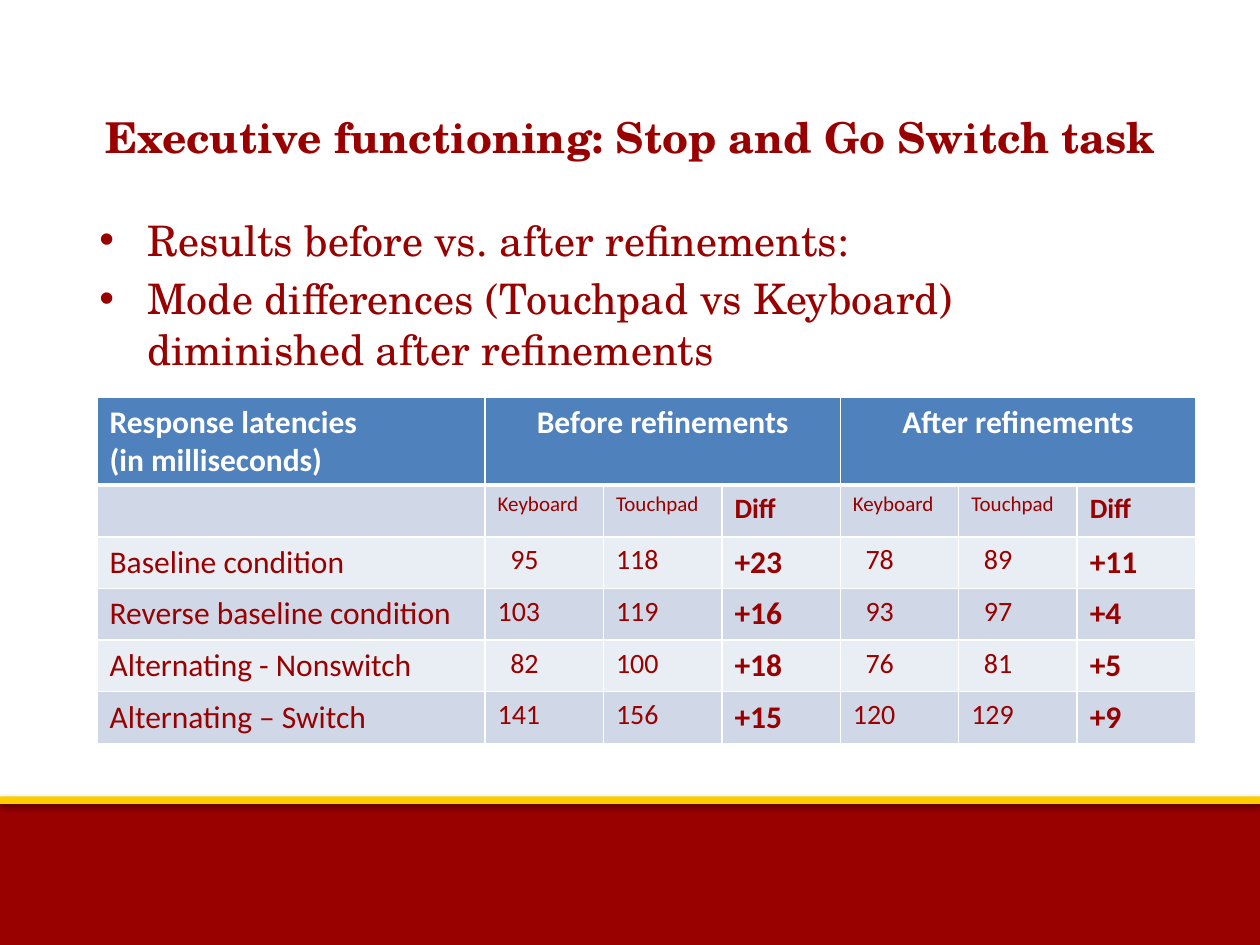
import dataclasses

import pptx
import pptx.dml.color
import pptx.enum.shapes
import pptx.enum.text
import pptx.oxml
import pptx.oxml.ns
import pptx.util

Inches = pptx.util.Inches
Pt = pptx.util.Pt
ALIGN = pptx.enum.text.PP_ALIGN
ANCHOR = pptx.enum.text.MSO_ANCHOR
NS = pptx.oxml.ns.nsdecls("a")


@dataclasses.dataclass(frozen=True)
class Theme:
    red: str = "990000"
    gold: str = "FFCC00"
    white: str = "FFFFFF"
    black: str = "000000"
    head: str = "4F81BD"
    bands: tuple = ("D0D8E8", "E9EDF4")
    serif: str = "TeX Gyre Schola"
    sans: str = "Calibri"
    title: float = 24.3
    body: float = 24
    large: float = 18
    mid: float = 16
    small: float = 12


THEME = Theme()
HEADS = ["Response latencies\n(in milliseconds)", "Before refinements", "After refinements"]
MODES = ["Keyboard", "Touchpad", "Diff"]
RESULTS = [
    ("Baseline condition", "95", "118", "+23", "78", "89", "+11"),
    ("Reverse baseline condition", "103", "119", "+16", "93", "97", "+4"),
    ("Alternating - Nonswitch", "82", "100", "+18", "76", "81", "+5"),
    ("Alternating – Switch", "141", "156", "+15", "120", "129", "+9"),
]


def paint(fill, color):
    fill.solid()
    fill.fore_color.rgb = pptx.dml.color.RGBColor.from_string(color)


def style(para, face, size, color, bold=False):
    for run in para.runs:
        run.font.name = face
        run.font.size = Pt(size)
        run.font.bold = bold
        paint(run.font.fill, color)


def add_band(slide, top, height, color, alpha, dist):
    """Draw a full-width bar with a soft shadow below it."""
    band = slide.shapes.add_shape(
        pptx.enum.shapes.MSO_SHAPE.RECTANGLE, 0, Inches(top), Inches(10), Inches(height))
    paint(band.fill, color)
    band.line.fill.background()
    band.shadow.inherit = False
    glow = band._element.spPr.find(pptx.oxml.ns.qn("a:effectLst"))
    glow.append(pptx.oxml.parse_xml(
        f'<a:outerShdw {NS} blurRad="{Pt(3.1)}" dist="{Pt(dist)}" dir="5400000" '
        f'rotWithShape="0"><a:srgbClr val="{THEME.black}">'
        f'<a:alpha val="{alpha * 1000}"/></a:srgbClr></a:outerShdw>'))


def add_frame(slide, top, height):
    box = slide.shapes.add_textbox(Inches(0.69), Inches(top), Inches(8.62), Inches(height))
    box.text_frame.word_wrap = True
    return box.text_frame


def add_title(slide, text):
    frame = add_frame(slide, 0.79, 0.59)
    frame.vertical_anchor = ANCHOR.MIDDLE
    frame.text = text
    para = frame.paragraphs[0]
    para.alignment = ALIGN.CENTER
    style(para, THEME.serif, THEME.title, THEME.red, True)


def add_list(slide, items):
    frame = add_frame(slide, 1.65, 3.94)
    for i, item in enumerate(items):
        para = frame.add_paragraph() if i else frame.paragraphs[0]
        para.text = item
        props = para._p.get_or_add_pPr()
        props.set("marL", str(Inches(0.38)))
        props.set("indent", str(-Inches(0.38)))
        for tag in ('buFont typeface="Arial"', 'buChar char="•"'):
            props.append(pptx.oxml.parse_xml(f"<a:{tag} {NS}/>"))
        if i:
            para.space_before = Pt(THEME.body * 0.2)
        style(para, THEME.serif, THEME.body, THEME.red)


def edge(cell, base):
    """Give a cell white borders, with the base line of its own width."""
    props = cell._tc.get_or_add_tcPr()
    for i, side in enumerate("LRTB"):
        width = base if side == "B" else 1
        props.insert(i, pptx.oxml.parse_xml(
            f'<a:ln{side} {NS} w="{Pt(width)}"><a:solidFill>'
            f'<a:srgbClr val="{THEME.white}"/></a:solidFill></a:ln{side}>'))


def fill_cell(cell, text, size, color, bold=False, align=ALIGN.LEFT):
    cell.text_frame.text = text
    for para in cell.text_frame.paragraphs:
        para.alignment = align
        style(para, THEME.sans, size, color, bold)


def add_grid(slide):
    rows = [("", *MODES, *MODES), *RESULTS]
    grid = slide.shapes.add_table(
        len(rows) + 1, 7, Inches(0.77), Inches(3.15), Inches(8.71), Inches(2.73)).table
    grid.first_row = grid.horz_banding = False
    for i, col in enumerate(grid.columns):
        col.width = Inches(0.94 if i else 3.08)
    for i, row in enumerate(grid.rows):
        row.height = Inches(0.41 if i else 0.7)
        for cell in row.cells:
            paint(cell.fill, THEME.bands[(i - 1) % 2] if i else THEME.head)
            edge(cell, 1 if i else 3)

    for col, text in zip((0, 1, 4), HEADS):
        if col:
            grid.cell(0, col).merge(grid.cell(0, col + 2))
        fill_cell(grid.cell(0, col), text, THEME.large, THEME.white, True,
                  ALIGN.CENTER if col else ALIGN.LEFT)

    for i, row in enumerate(rows, 1):
        for j, text in enumerate(row):
            cell = grid.cell(i, j)
            diff = j in (3, 6)
            if i == 1:
                size = THEME.mid if diff else THEME.small
            else:
                size = THEME.large if diff or j == 0 else THEME.mid
            fill_cell(cell, text, size, THEME.red, diff)
            if text.isdigit() and len(text) == 2:
                cell.margin_left = Inches(0.2)


def main():
    deck = pptx.Presentation()
    deck.slide_width, deck.slide_height = Inches(10), Inches(7.5)
    slide = deck.slides.add_slide(deck.slide_layouts[6])
    add_band(slide, 6.35, 1.15, THEME.red, 35, 1.8)
    add_band(slide, 6.32, 0.06, THEME.gold, 38, 1.6)
    add_title(slide, "Executive functioning: Stop and Go Switch task")
    add_list(slide, [
        "Results before vs. after refinements:",
        "Mode differences (Touchpad vs Keyboard)\vdiminished after refinements",
    ])
    add_grid(slide)
    deck.save("out.pptx")


if __name__ == "__main__":
    main()
